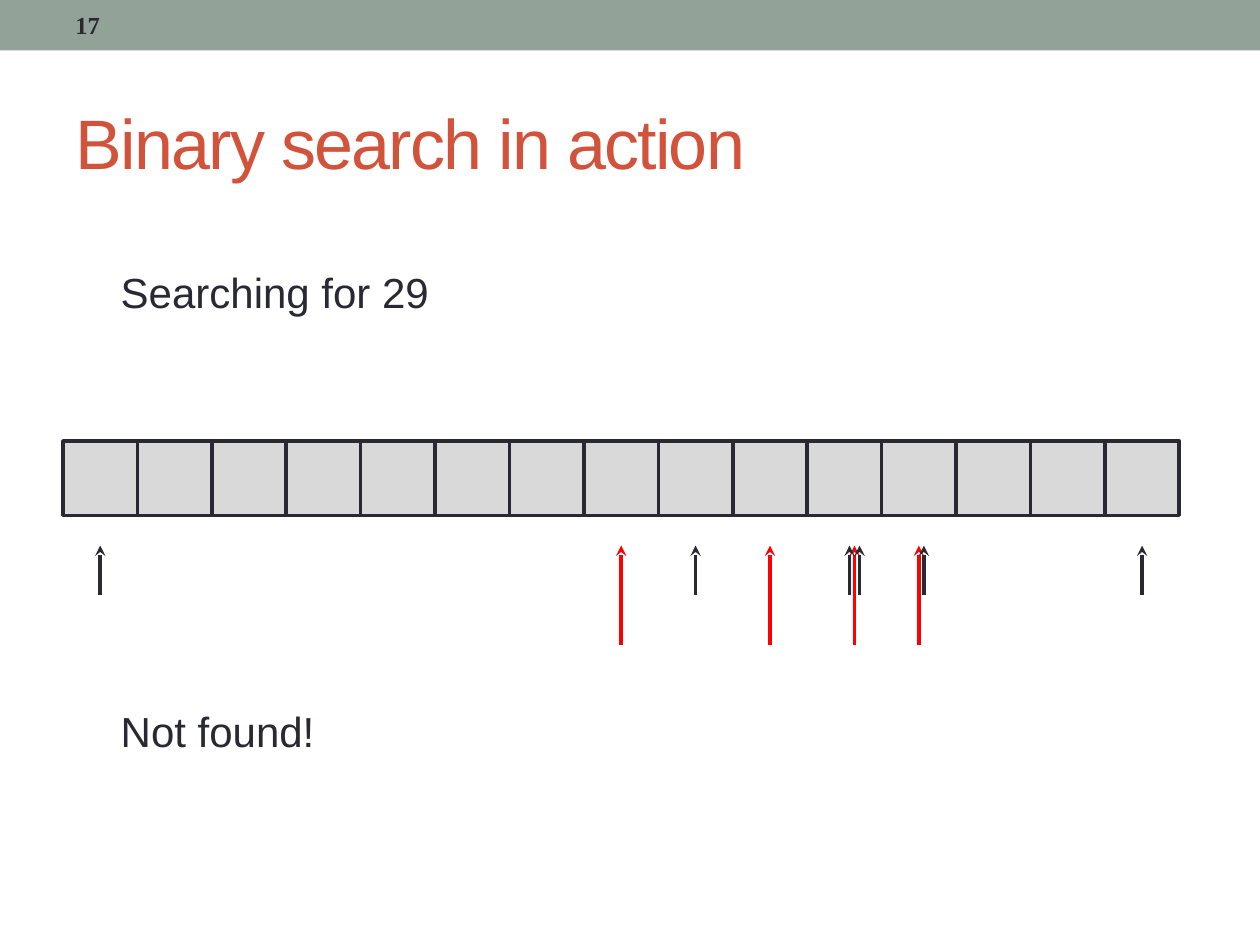
from lxml import etree
from pptx import Presentation, util as u
from pptx.dml.color import RGBColor
from pptx.enum import shapes, text
from pptx.oxml.ns import qn

COLORS = {"band": "93A299", "title": "D2533C", "ink": "292934",
          "cell": "D9D9D9", "probe": "FF0000"}


def color(name):
    return RGBColor.from_string(COLORS[name])


def write(box, words, size, font, ink, anchor, bold=False):
    frame = box.text_frame
    frame.text = words
    frame.vertical_anchor = anchor
    para = frame.paragraphs[0]
    para.alignment = text.PP_ALIGN.LEFT
    span = para.runs[0]
    span.font.size = u.Pt(size)
    span.font.name = font
    span.font.bold = bold
    span.font.color.rgb = color(ink)
    return span


deck = Presentation()
deck.slide_width = u.Inches(10)
deck.slide_height = u.Inches(7.5)
page = deck.slides.add_slide(deck.slide_layouts[5])

band = page.shapes.add_shape(shapes.MSO_SHAPE.RECTANGLE, 0, 0, u.Inches(10), u.Inches(0.4))
band.shadow.inherit = False
band.fill.solid()
band.fill.fore_color.rgb = color("band")
band.line.fill.background()

title = page.shapes.title
title.left, title.top = u.Inches(0.5), u.Inches(0.58)
title.width, title.height = u.Inches(9), u.Inches(1.08)
title_span = write(title, "Binary search in action", 40, "Arial", "title", text.MSO_ANCHOR.MIDDLE)
title_span.font._element.set("spc", "-100")

number = page.shapes.add_textbox(u.Inches(0.5), u.Inches(0.02), u.Inches(3.17), u.Inches(0.36))
number.text_frame.word_wrap = True
write(number, "17", 14, "Times New Roman", "ink", text.MSO_ANCHOR.MIDDLE, bold=True)

for words, top, width in [("Searching for 29", 2.07, 2.67), ("Not found!", 5.55, 1.76)]:
    box = page.shapes.add_textbox(u.Inches(0.86), u.Inches(top), u.Inches(width), u.Inches(0.5))
    box.text_frame.word_wrap = False
    box.text_frame.auto_size = text.MSO_AUTO_SIZE.SHAPE_TO_FIT_TEXT
    write(box, words, 24, "Arial", "ink", text.MSO_ANCHOR.TOP)

row_left, cell_count = 0.5, 15
cell_size = 8.86 / cell_count
for index in range(cell_count):
    cell = page.shapes.add_shape(
        shapes.MSO_SHAPE.RECTANGLE, u.Inches(row_left + index * cell_size), u.Inches(3.5),
        u.Inches(cell_size), u.Inches(cell_size))
    cell.shadow.inherit = False
    cell.fill.solid()
    cell.fill.fore_color.rgb = color("cell")
    cell.line.color.rgb = color("ink")
    cell.line.width = u.Pt(2)

tails = {"probe": 5.12, "ink": 4.72}
arrows = [(10, 0.08, "probe"), (0, 0, "ink"), (14, 0, "ink"), (7, 0, "probe"),
          (8, 0, "ink"), (11, 0, "probe"), (11, 0.04, "ink"), (9, 0, "probe"),
          (10, 0.04, "ink"), (10, 0.12, "ink")]
for index, shift, kind in arrows:
    x = u.Inches(row_left + (index + 0.5) * cell_size + shift)
    arrow = page.shapes.add_connector(
        shapes.MSO_CONNECTOR.STRAIGHT, x, u.Inches(tails[kind]), x, u.Inches(4.33))
    arrow.line.color.rgb = color(kind)
    arrow.line.width = u.Pt(2)
    etree.SubElement(arrow.line._get_or_add_ln(), qn("a:tailEnd"), type="stealth")
    etree.SubElement(arrow._element.spPr, qn("a:effectLst"))

deck.save("out.pptx")
